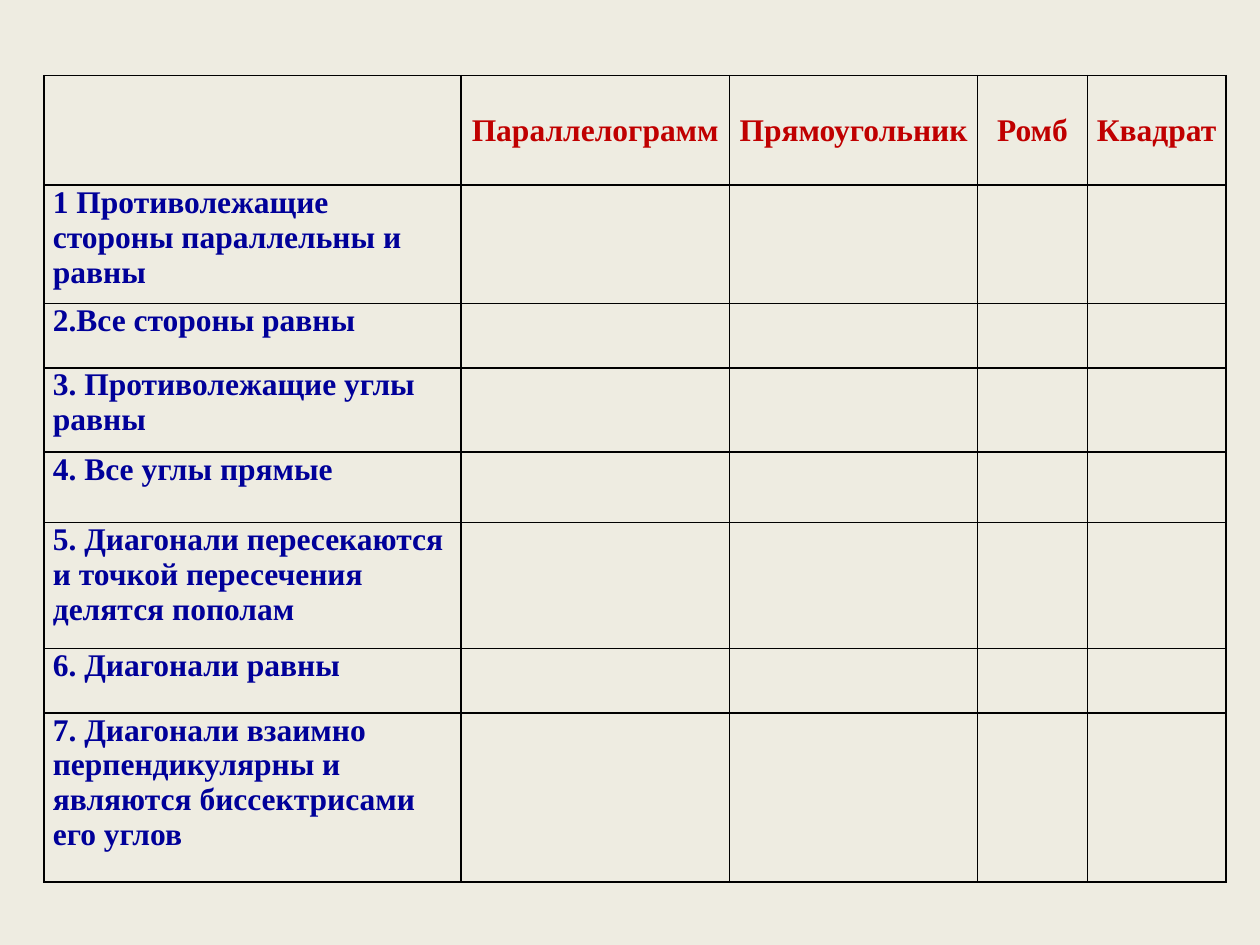
from lxml.etree import SubElement
from pptx import Presentation
from pptx.dml.color import RGBColor as RGB
from pptx.enum.text import MSO_ANCHOR as Anchor, PP_ALIGN as Align
from pptx.oxml.ns import qn
from pptx.util import Inches, Pt

CREAM = RGB(0xEE, 0xEC, 0xE1)
BLACK = RGB(0, 0, 0)
RED = RGB(0xC0, 0, 0)
NAVY = RGB(0, 0, 0x99)

FIGURES = ["Параллелограмм", "Прямоугольник", "Ромб", "Квадрат"]
PROPERTIES = [
    "1 Противолежащие стороны параллельны и равны",
    "2.Все стороны равны",
    "3. Противолежащие углы равны",
    "4. Все углы прямые",
    "5. Диагонали пересекаются и точкой пересечения делятся пополам",
    "6. Диагонали равны",
    "7. Диагонали взаимно перпендикулярны и являются биссектрисами его углов",
]
COLUMN_WIDTHS = [3.31, 2.13, 1.97, 0.87, 1.1]
ROW_HEIGHTS = [0.87, 0.94, 0.51, 0.67, 0.56, 1, 0.51, 1.34]


class PropertySlide:
    font = "Times New Roman"
    size = Pt(18)
    side_margin = Inches(0.07)
    border = Pt(1)

    def __init__(self, deck):
        self.slide = deck.slides.add_slide(deck.slide_layouts[6])
        self.width, self.height = deck.slide_width, deck.slide_height
        backdrop = self.slide.background.fill
        backdrop.solid()
        backdrop.fore_color.rgb = CREAM

    def grid(self, left, top, widths, heights):
        table = self.slide.shapes.add_table(
            len(heights), len(widths),
            int(left * self.width), int(top * self.height),
            Inches(sum(widths)), Inches(sum(heights))).table
        table.first_row = table.horz_banding = False
        for column, width in zip(table.columns, widths):
            column.width = Inches(width)
        for row, height in zip(table.rows, heights):
            row.height = Inches(height)
        for cell in table.iter_cells():
            self.outline(cell)
            cell.fill.background()
        return table

    def outline(self, cell):
        properties = cell._tc.get_or_add_tcPr()
        for side in ("lnL", "lnR", "lnT", "lnB"):
            line = SubElement(properties, qn(f"a:{side}"), w=str(self.border))
            fill = SubElement(line, qn("a:solidFill"))
            SubElement(fill, qn("a:srgbClr"), val=str(BLACK))

    def label(self, cell, text, color, align=Align.LEFT, anchor=Anchor.TOP):
        cell.margin_left = cell.margin_right = self.side_margin
        cell.margin_top = cell.margin_bottom = 0
        cell.vertical_anchor = anchor
        cell.text_frame.text = text
        paragraph = cell.text_frame.paragraphs[0]
        paragraph.alignment = align
        font = paragraph.runs[0].font
        font.name, font.size, font.bold = self.font, self.size, True
        font.color.rgb = color


def main():
    deck = Presentation()
    deck.slide_width, deck.slide_height = Inches(10), Inches(7.5)
    page = PropertySlide(deck)
    table = page.grid(0.035, 0.08, COLUMN_WIDTHS, ROW_HEIGHTS)
    for column, figure in enumerate(FIGURES, 1):
        page.label(table.cell(0, column), figure, RED, Align.CENTER, Anchor.MIDDLE)
    for row, statement in enumerate(PROPERTIES, 1):
        page.label(table.cell(row, 0), statement, NAVY)
    deck.save("out.pptx")


if __name__ == "__main__":
    main()
